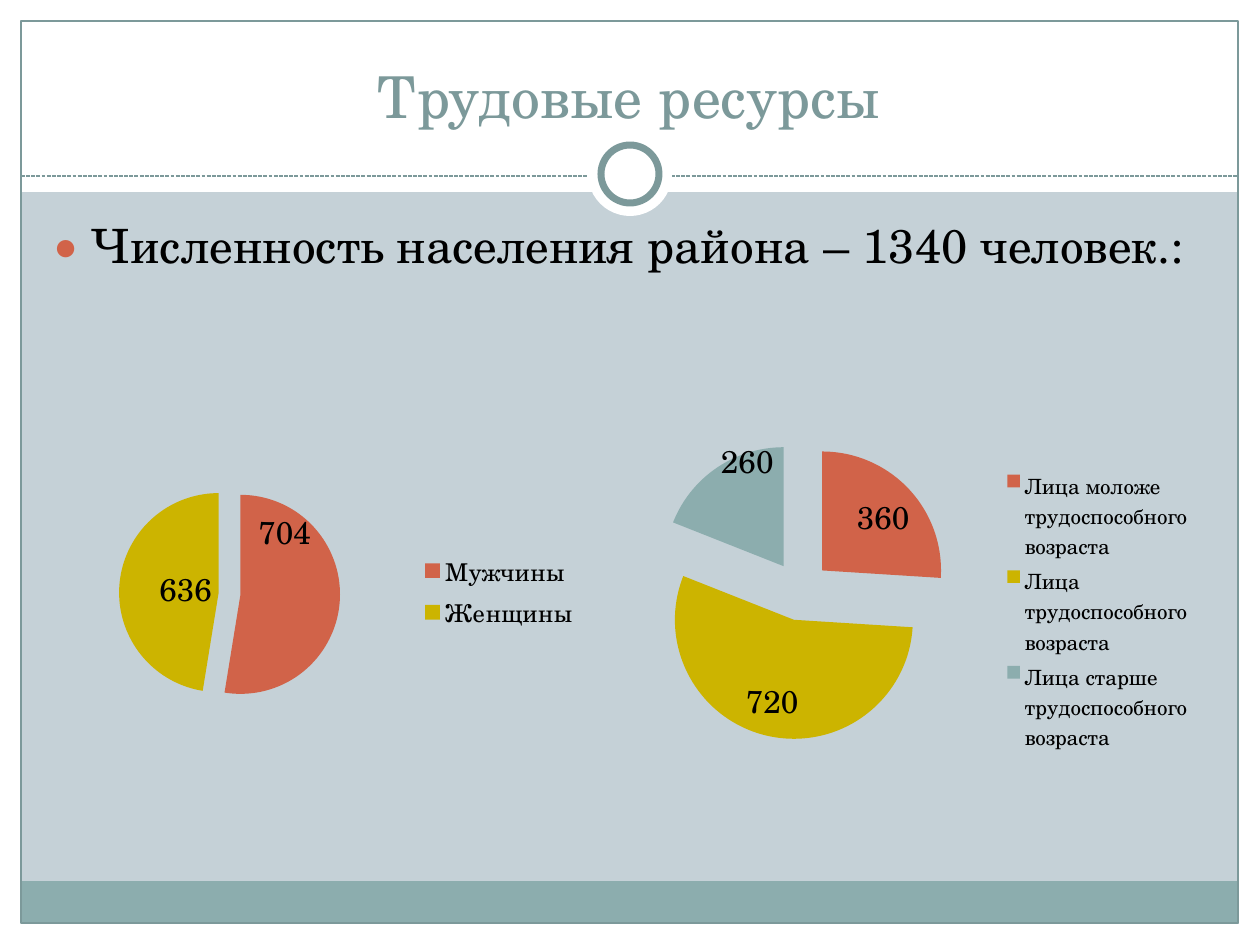
from lxml import etree
from pptx import Presentation
from pptx.chart.data import CategoryChartData
from pptx.dml.color import RGBColor
from pptx.enum.chart import XL_CHART_TYPE as ChartType, XL_LABEL_POSITION as LabelPos, XL_LEGEND_POSITION as LegendPos
from pptx.enum.dml import MSO_LINE_DASH_STYLE as Dash
from pptx.enum.shapes import MSO_CONNECTOR as Connector, MSO_SHAPE as Shape
from pptx.enum.text import MSO_ANCHOR as Anchor, PP_ALIGN as Align
from pptx.oxml import parse_xml
from pptx.oxml.ns import nsdecls, qn
from pptx.util import Pt

SCALE = 914400 / 126
WIDTH, HEIGHT = 1260, 945
FONT = "TeX Gyre Schola"
COLORS = {"back": "C5D1D7", "white": "FFFFFF", "teal": "7C999A", "band": "8CADAE",
          "red": "D16349", "gold": "CCB400", "black": "000000"}


def emu(*lengths):
    return [round(length * SCALE) for length in lengths]


def rgb(name):
    return RGBColor.from_string(COLORS[name])


def layout_xml(inner=False, **values):
    target = '<c:layoutTarget val="inner"/>' if inner else ""
    modes = '<c:xMode val="edge"/><c:yMode val="edge"/>' if inner else ""
    numbers = "".join(f'<c:{key} val="{value}"/>' for key, value in values.items())
    return parse_xml(f'<c:layout {nsdecls("c")}><c:manualLayout>{target}{modes}{numbers}'
                     '</c:manualLayout></c:layout>')


class Deck:
    """Holds the style and the current slide, and draws each kind of element."""

    def __init__(self):
        self.deck = Presentation()
        self.deck.slide_width, self.deck.slide_height = emu(WIDTH, HEIGHT)
        self.slide = self.deck.slides.add_slide(self.deck.slide_layouts[6])
        fill = self.slide.background.fill
        fill.solid()
        fill.fore_color.rgb = rgb("back")

    def style_font(self, font, size, color="black"):
        for key, value in {"name": FONT, "size": Pt(size)}.items():
            setattr(font, key, value)
        font.color.rgb = rgb(color)

    def shape(self, kind, box, fill=None, line=None, weight=0.75):
        shape = self.slide.shapes.add_shape(kind, *emu(*box))
        shape.shadow.inherit = False
        if fill:
            shape.fill.solid()
            shape.fill.fore_color.rgb = rgb(fill)
        else:
            shape.fill.background()
        if line:
            shape.line.color.rgb = rgb(line)
            shape.line.width = Pt(weight)
        else:
            shape.line.fill.background()

    def dashed_line(self, start, end, color):
        rule = self.slide.shapes.add_connector(Connector.STRAIGHT, *emu(*start, *end))
        for key, value in {"width": Pt(0.75), "dash_style": Dash.SQUARE_DOT}.items():
            setattr(rule.line, key, value)
        rule.line.color.rgb = rgb(color)
        etree.SubElement(rule._element.spPr, qn("a:effectLst"))

    def text(self, box, words, size, color="black", align=Align.LEFT, anchor=Anchor.TOP, bullet=None):
        frame = self.slide.shapes.add_textbox(*emu(*box)).text_frame
        for key, value in {"word_wrap": True, "vertical_anchor": anchor}.items():
            setattr(frame, key, value)
        paragraph = frame.paragraphs[0]
        paragraph.alignment = align
        if bullet:
            props = paragraph._p.get_or_add_pPr()
            indent, = emu(40)
            props.set("marL", str(indent))
            props.set("indent", str(-indent))
            color_tag = etree.SubElement(props, qn("a:buClr"))
            etree.SubElement(color_tag, qn("a:srgbClr"), val=COLORS[bullet])
            etree.SubElement(props, qn("a:buSzPct"), val="85000")
            etree.SubElement(props, qn("a:buFont"), typeface=FONT)
            etree.SubElement(props, qn("a:buChar"), char="●")
        run = paragraph.add_run()
        run.text = words
        self.style_font(run.font, size, color)

    def pie(self, box, slices, legend_size, explosion, plot, position, show_value):
        data = CategoryChartData()
        data.categories = [name for name, *_ in slices]
        data.add_series("Series 1", [value for _, value, *_ in slices])
        chart = self.slide.shapes.add_chart(ChartType.PIE, *emu(*box), data).chart
        self.style_font(chart.font, 18)
        for key, value in {"has_title": False, "has_legend": True}.items():
            setattr(chart, key, value)
        for key, value in {"position": LegendPos.RIGHT, "include_in_layout": False}.items():
            setattr(chart.legend, key, value)
        self.style_font(chart.legend.font, legend_size)
        area = chart._chartSpace.chart.plotArea
        for old in area.findall(qn("c:layout")):
            area.remove(old)
        area.insert(0, layout_xml(True, **dict(zip("xywh", plot))))
        pie = chart.plots[0]
        pie.vary_by_categories = True
        series = pie.series[0]
        series.data_labels.show_value = show_value
        for index, (_, _, color, label, shift) in enumerate(slices):
            point = series.points[index]
            point.format.fill.solid()
            point.format.fill.fore_color.rgb = rgb(color)
            point.format.line.fill.background()
            run = point.data_label.text_frame.paragraphs[0].add_run()
            run.text = label
            self.style_font(run.font, 18)
            point.data_label.position = position
            mark = series._element.find(qn("c:dLbls")).findall(qn("c:dLbl"))[index]
            mark.find(qn("c:idx")).addnext(layout_xml(**dict(zip("xy", shift))))
        explode = etree.Element(qn("c:explosion"), val=str(explosion))
        series._element.find(qn("c:dPt")).addprevious(explode)


def main():
    deck = Deck()
    for box in [(0, 924, WIDTH, 21), (0, 0, WIDTH, 192), (0, 0, 21, HEIGHT), (1239, 0, 21, HEIGHT)]:
        deck.shape(Shape.RECTANGLE, box, "white")
    deck.shape(Shape.RECTANGLE, (21, 881, 1217, 43), "band")
    deck.shape(Shape.RECTANGLE, (21, 21, 1217, 902), line="teal")
    deck.dashed_line((21, 176), (1238, 176), "teal")
    deck.shape(Shape.OVAL, (588, 132, 84, 84), "white")
    deck.shape(Shape.OVAL, (601, 145, 58, 58), "white", "teal", 4)
    deck.text((41, 32, 1176, 104), "Трудовые ресурсы", 33, "teal", Align.CENTER, Anchor.BOTTOM)
    deck.text((39, 210, 1175, 630), "Численность населения района – 1340 человек.:", 27, bullet="red")
    deck.pie((35, 383, 556, 417),
             [("Мужчины", 708, "red", "704", (-0.01, -0.16)),
              ("Женщины", 639, "gold", "636", (0.03, 0))],
             14, 11, (0.15, 0.24, 0.4, 0.53), LabelPos.CENTER, True)
    deck.pie((610, 354, 595, 515),
             [("Лица моложе трудоспособного возраста", 26, "red", "360", (0.01, 0)),
              ("Лица трудоспособного возраста", 55, "gold", "720", (-0.04, -0.01)),
              ("Лица старше трудоспособного возраста", 19, "band", "260", (0, -0.07))],
             12, 25, (0.07, 0.06, 0.5, 0.8), LabelPos.INSIDE_END, False)
    deck.deck.save("out.pptx")


if __name__ == "__main__":
    main()
